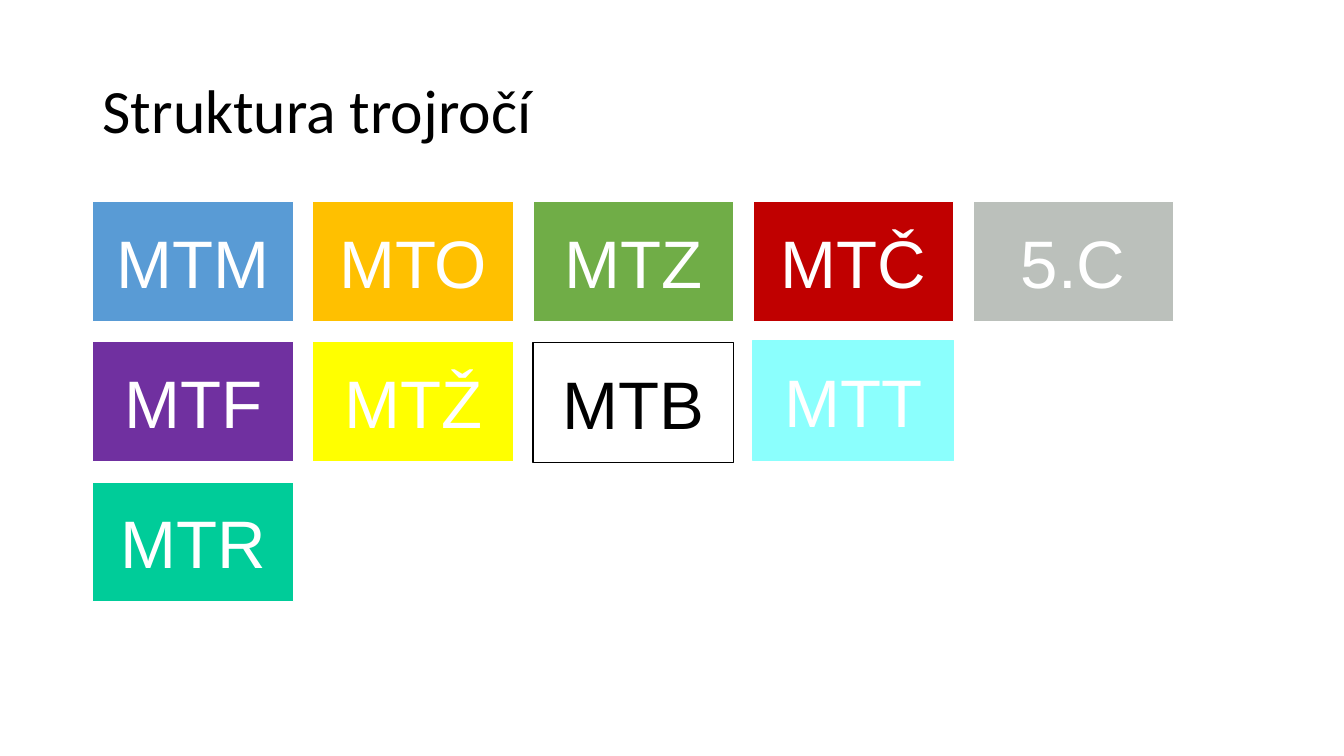
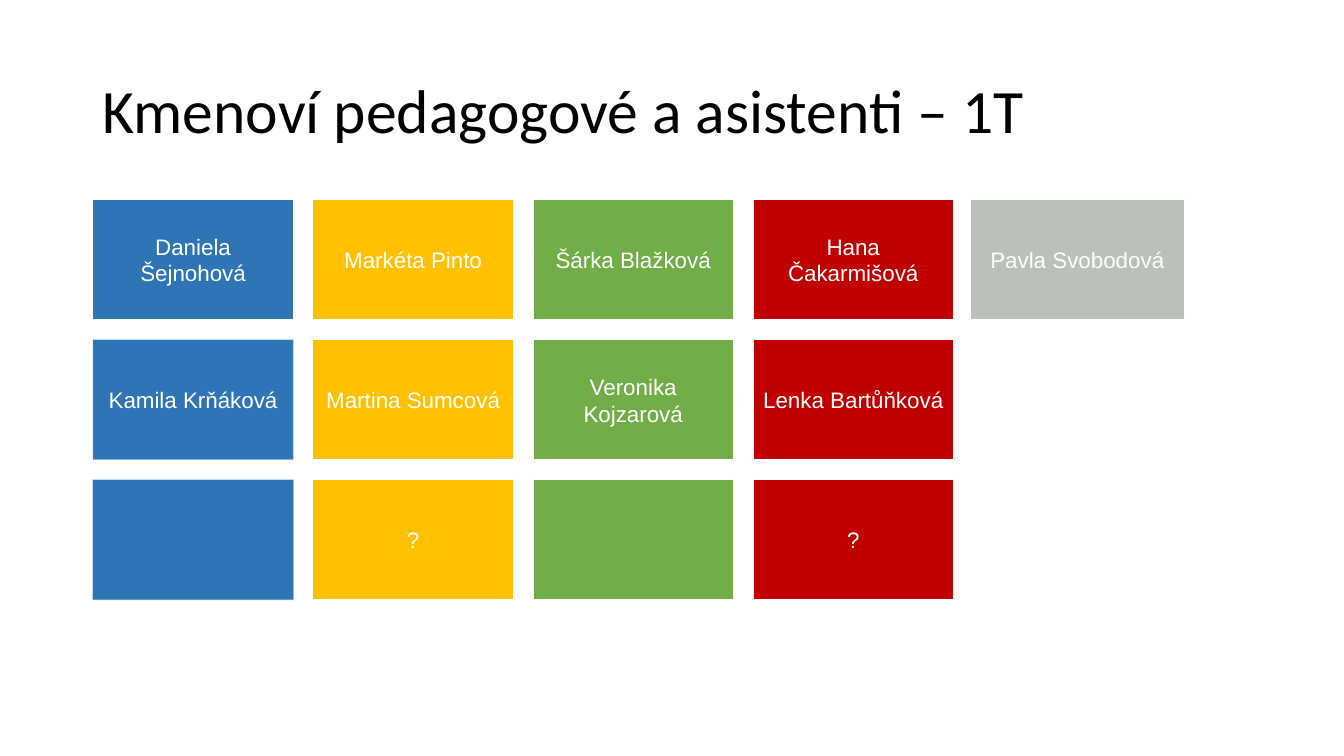
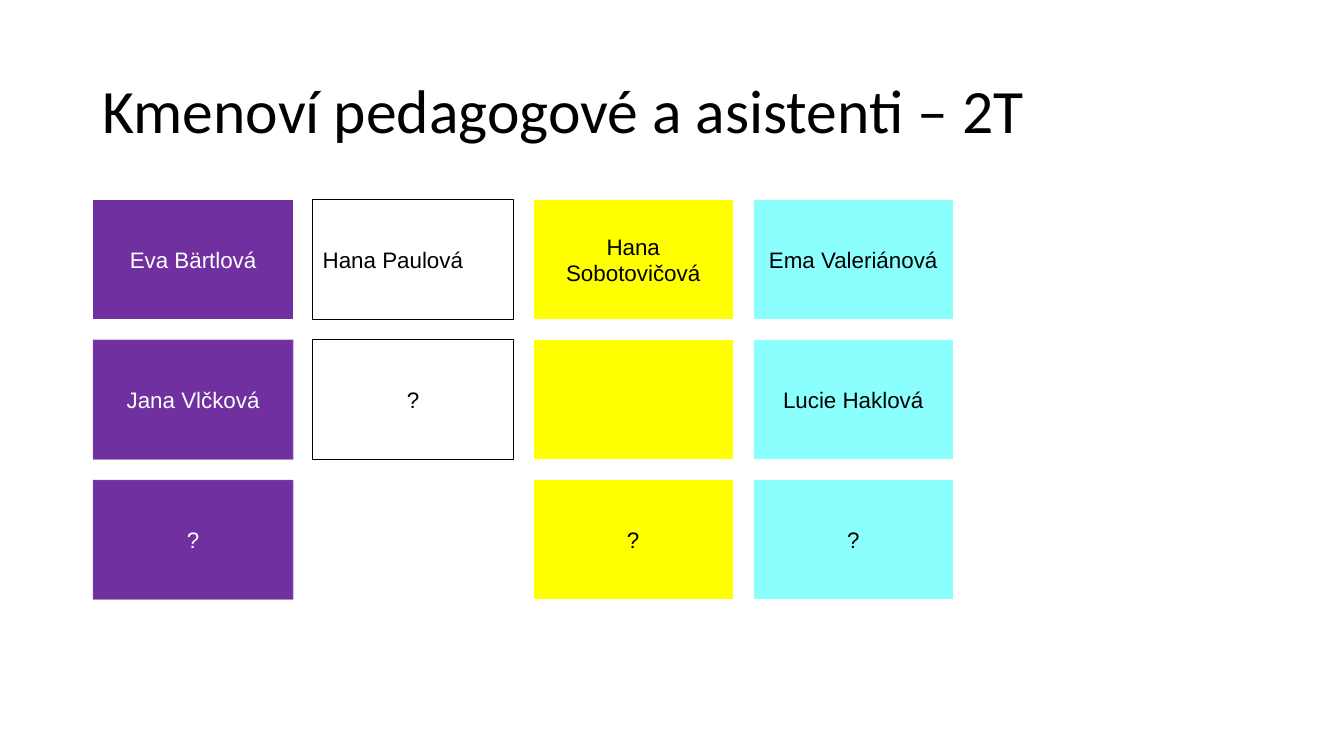
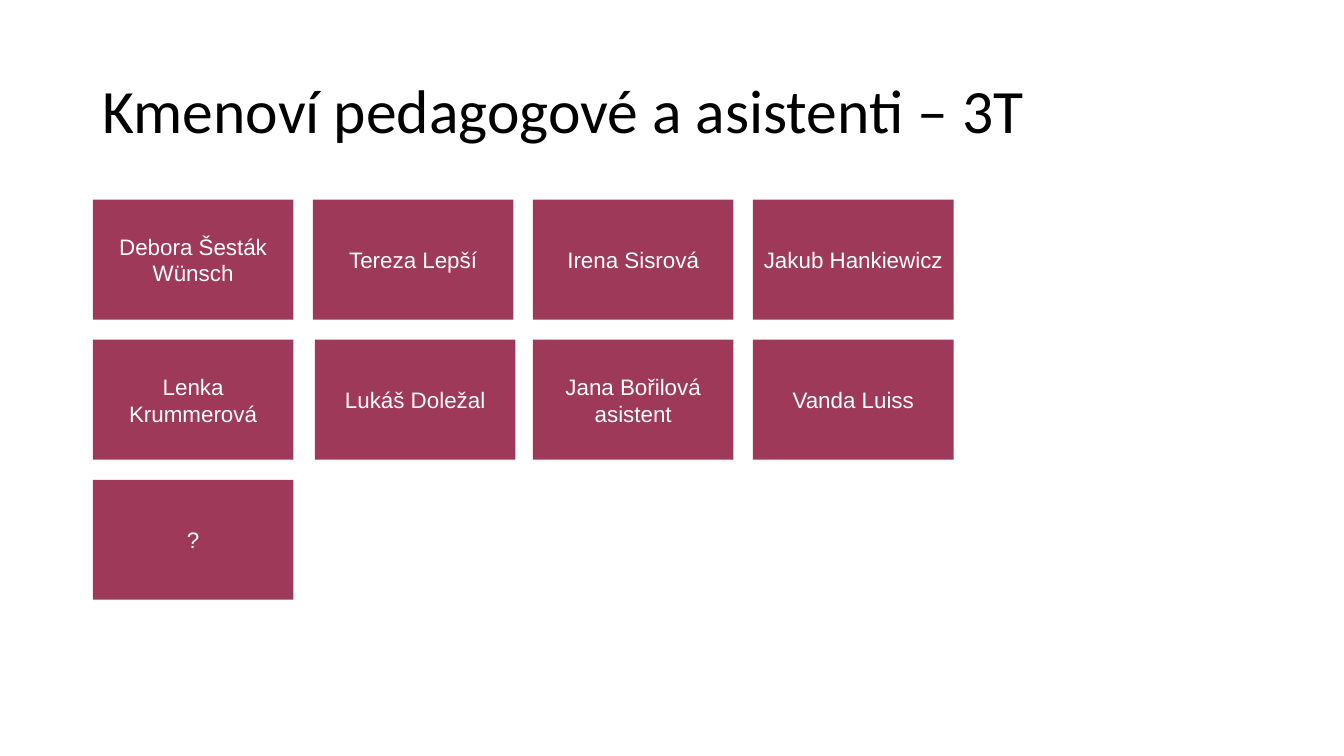
from lxml import etree
from pptx import Presentation
from pptx.dml.color import RGBColor
from pptx.enum import shapes, text
from pptx.oxml import ns
from pptx.util import Inches, Pt

WHITE, BLACK = "FFFFFF", "000000"
LEFT, WIDTH, HEIGHT = 0.92, 1.99, 1.19
COLUMN_STEP, ROW_STEP = 8.73 / 4, 1.39
FAINT = 14

STYLES = {
    "sky": {"fill": "599BD5"},
    "blue": {"fill": "2E75B6"},
    "blue soft": {"fill": "2E75B6", "opacity": FAINT},
    "blue edged": {"fill": "2E75B6", "line": "0070C0", "opacity": FAINT},
    "orange": {"fill": "FFC000"},
    "green": {"fill": "70AD47"},
    "red": {"fill": "C00000"},
    "gray": {"fill": "BBC0BB"},
    "purple": {"fill": "7030A0"},
    "purple soft": {"fill": "7030A0", "opacity": FAINT},
    "yellow": {"fill": "FFFF00"},
    "yellow dark": {"fill": "FFFF00", "font": BLACK},
    "cyan": {"fill": "8BFFFD", "line": "8BFFFD"},
    "cyan dark": {"fill": "8BFFFD", "font": BLACK},
    "teal": {"fill": "00CC99"},
    "white": {"fill": WHITE, "line": BLACK, "font": BLACK},
    "open": {"fill": None, "line": BLACK, "font": BLACK},
    "wine": {"fill": "9E3959", "line": None},
}

SLIDES = [
    {"title": "Struktura trojročí", "top": 2, "size": 48, "rows": [
        [("sky", "MTM"), ("orange", "MTO"), ("green", "MTZ"), ("red", "MTČ"), ("gray", "5.C")],
        [("purple", "MTF"), ("yellow", "MTŽ"), ("open", "MTB", {"dy": 0.01}),
         ("cyan", "MTT", {"dy": -0.01})],
        [("teal", "MTR")],
    ]},
    {"title": "Kmenoví pedagogové a asistenti – 1T", "top": 1.98, "size": 16, "rows": [
        [("blue", "Daniela Šejnohová"), ("orange", "Markéta Pinto"), ("green", "Šárka Blažková"),
         ("red", "Hana Čakarmišová"), ("gray", "Pavla Svobodová", {"dx": -0.03, "width": 2.13})],
        [("blue soft", "Kamila Krňáková"), ("orange", "Martina Sumcová"),
         ("green", "Veronika Kojzarová"), ("red", "Lenka Bartůňková")],
        [("blue edged", ""), ("orange", "?"), ("green", ""), ("red", "?")],
    ]},
    {"title": "Kmenoví pedagogové a asistenti – 2T", "top": 1.98, "size": 16, "rows": [
        [("purple", "Eva Bärtlová"), ("white", "Hana Paulová", {"align": text.PP_ALIGN.LEFT}),
         ("yellow dark", "Hana Sobotovičová"), ("cyan dark", "Ema Valeriánová")],
        [("purple soft", "Jana Vlčková"), ("white", "?"), ("yellow dark", ""),
         ("cyan dark", "Lucie Haklová")],
        [("purple soft", "?"), None, ("yellow dark", "?"), ("cyan dark", "?")],
    ]},
    {"title": "Kmenoví pedagogové a asistenti – 3T", "top": 1.98, "size": 16, "rows": [
        [("wine", "Debora Šesták Wünsch"), ("wine", "Tereza Lepší"), ("wine", "Irena Sisrová"),
         ("wine", "Jakub Hankiewicz")],
        [("wine", "Lenka Krummerová"), ("wine", "Lukáš Doležal", {"dx": 0.02}),
         ("wine", "Jana Bořilová\nasistent"), ("wine", "Vanda Luiss")],
        [("wine", "?")],
    ]},
]


def color(value):
    return RGBColor.from_string(value)


def paint(fill, value):
    if value is None:
        fill.background()
    else:
        fill.solid()
        fill.fore_color.rgb = color(value)


def write(shape, words, size, font, ink, align, inset, spacing=1.0):
    frame = shape.text_frame
    formats = {
        "word_wrap": True, "vertical_anchor": text.MSO_ANCHOR.MIDDLE,
        "margin_left": Inches(0.1), "margin_right": Inches(0.1),
        "margin_top": Inches(inset), "margin_bottom": Inches(inset),
    }
    for name, value in formats.items():
        setattr(frame, name, value)
    frame.text = words
    for paragraph in frame.paragraphs:
        paragraph.alignment = align
        paragraph.line_spacing = spacing
        for run in paragraph.runs:
            run.font.name = font
            run.font.size = Pt(size)
            run.font.color.rgb = color(ink)


def add_title(slide, words):
    shape = slide.shapes.add_textbox(Inches(LEFT), Inches(0.4), Inches(11.5), Inches(1.45))
    write(shape, words, 44, "Calibri", BLACK, text.PP_ALIGN.LEFT, 0.05, 0.9)


def add_tile(slide, left, top, size, style_name, label, options=None):
    style, options = STYLES[style_name], options or {}
    shape = slide.shapes.add_shape(
        shapes.MSO_SHAPE.RECTANGLE,
        Inches(left + options.get("dx", 0)), Inches(top + options.get("dy", 0)),
        Inches(options.get("width", WIDTH)), Inches(HEIGHT))
    shape.shadow.inherit = False
    paint(shape.fill, style["fill"])
    paint(shape.line.fill, style.get("line", WHITE))
    shape.line.width = Pt(1)
    if "opacity" in style:
        line_color = shape.line.fill._xPr.find(".//" + ns.qn("a:srgbClr"))
        etree.SubElement(line_color, ns.qn("a:alpha"), val=str(style["opacity"] * 1000))
    if label:
        write(shape, label, size, "Arial", style.get("font", WHITE),
              options.get("align", text.PP_ALIGN.CENTER), 0.1)


def main():
    presentation = Presentation()
    presentation.slide_width, presentation.slide_height = Inches(13.33), Inches(7.5)
    for content in SLIDES:
        slide = presentation.slides.add_slide(presentation.slide_layouts[6])
        add_title(slide, content["title"])
        for row, tiles in enumerate(content["rows"]):
            for column, tile in enumerate(tiles):
                if tile:
                    add_tile(slide, LEFT + column * COLUMN_STEP, content["top"] + row * ROW_STEP,
                             content["size"], *tile)
    presentation.save("out.pptx")


if __name__ == "__main__":
    main()
